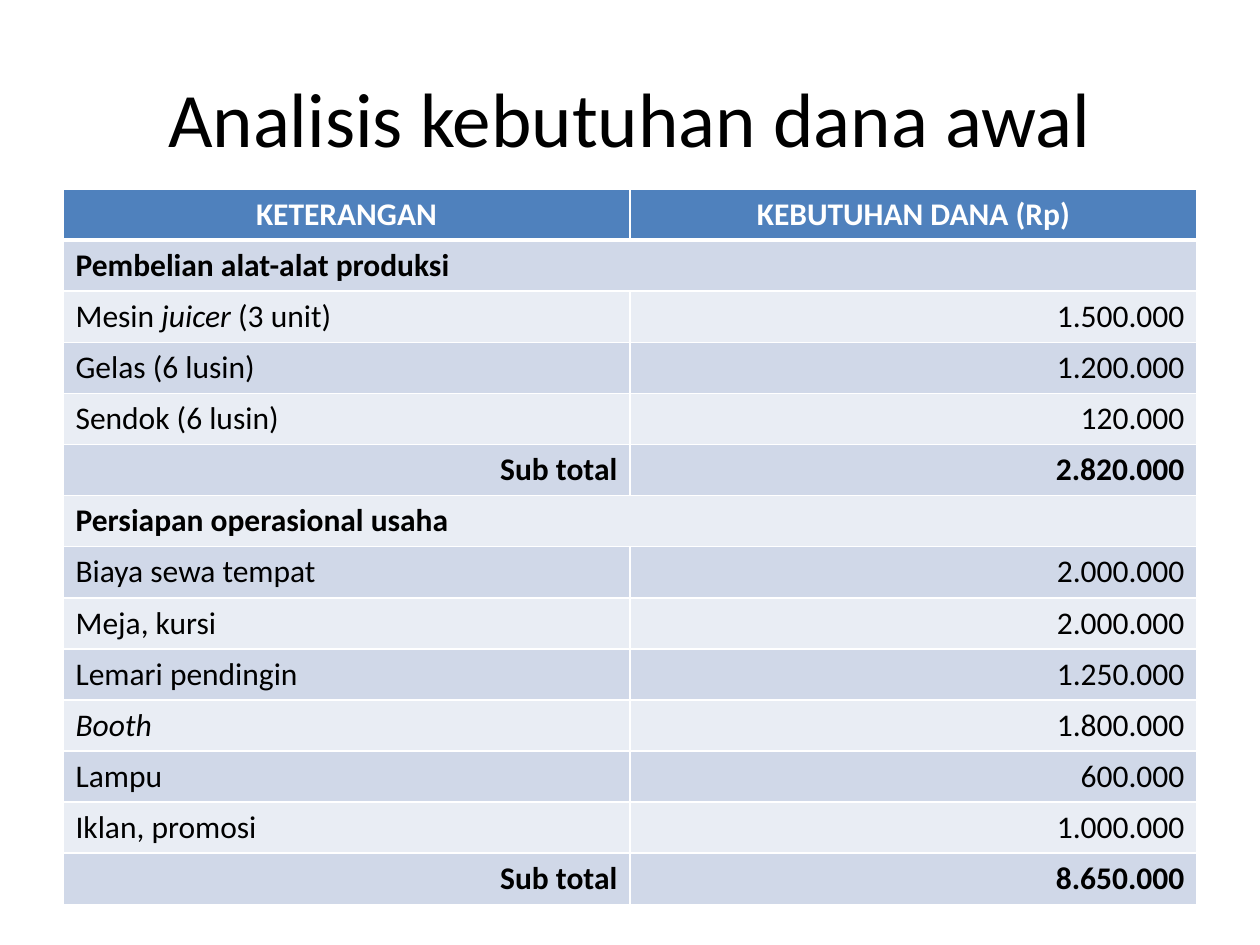
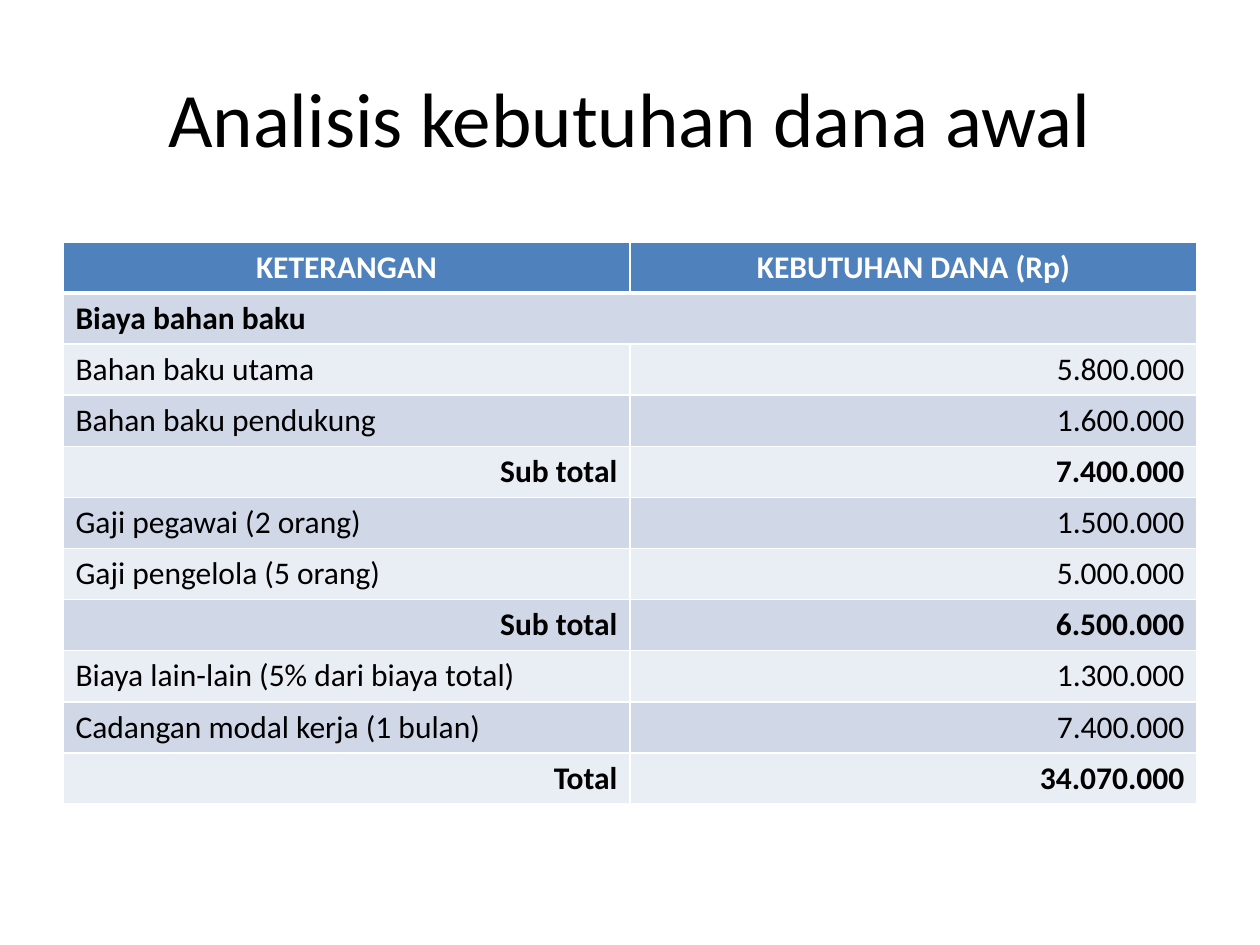
"""Build two slides that list the start-up funds a juice business needs."""
from lxml import etree
from pptx import Presentation
from pptx.dml.color import RGBColor
from pptx.enum.text import MSO_ANCHOR, PP_ALIGN
from pptx.oxml.ns import qn
from pptx.util import Inches, Pt

LEFT, CENTER, RIGHT = PP_ALIGN.LEFT, PP_ALIGN.CENTER, PP_ALIGN.RIGHT
MIDDLE = MSO_ANCHOR.MIDDLE
BLACK = RGBColor(0x00, 0x00, 0x00)
WHITE = RGBColor(0xFF, 0xFF, 0xFF)
BLUE = RGBColor(0x4F, 0x81, 0xBD)
DARK_BAND = RGBColor(0xD0, 0xD8, 0xE8)
LIGHT_BAND = RGBColor(0xE9, 0xED, 0xF4)
FONT = "Calibri"
TITLE_ONLY = 5
MARGIN, CONTENT_WIDTH = Inches(0.5), Inches(9)
ROW_HEIGHT = Inches(5.68 / 14)

TITLE = "Analisis kebutuhan dana awal"
HEADER = ("KETERANGAN", "KEBUTUHAN DANA (Rp)")
EQUIPMENT_COSTS = [
    ("Pembelian alat-alat produksi", None),
    ("Mesin *juicer* (3 unit)", "1.500.000"),
    ("Gelas (6 lusin)", "1.200.000"),
    ("Sendok (6 lusin)", "120.000"),
    ("Sub total", "2.820.000"),
    ("Persiapan operasional usaha", None),
    ("Biaya sewa tempat", "2.000.000"),
    ("Meja, kursi", "2.000.000"),
    ("Lemari pendingin", "1.250.000"),
    ("*Booth*", "1.800.000"),
    ("Lampu", "600.000"),
    ("Iklan, promosi", "1.000.000"),
    ("Sub total", "8.650.000"),
]
RUNNING_COSTS = [
    ("Biaya bahan baku", None),
    ("Bahan baku utama", "5.800.000"),
    ("Bahan baku pendukung", "1.600.000"),
    ("Sub total", "7.400.000"),
    ("Gaji pegawai (2 orang)", "1.500.000"),
    ("Gaji pengelola (5 orang)", "5.000.000"),
    ("Sub total", "6.500.000"),
    ("Biaya lain-lain (5% dari biaya total)", "1.300.000"),
    ("Cadangan modal kerja (1 bulan)", "7.400.000"),
    ("Total", "34.070.000"),
]


class BudgetDeck:
    """Hold the deck, its style and the current page."""

    def __init__(self):
        self.deck = Presentation()
        self.deck.slide_width, self.deck.slide_height = Inches(10), Inches(7.5)
        self.page = None

    def add_page(self, title):
        """Start a page with a centred title."""
        self.page = self.deck.slides.add_slide(self.deck.slide_layouts[TITLE_ONLY])
        box = self.page.shapes.title
        place = {"left": MARGIN, "top": Inches(0.3), "width": CONTENT_WIDTH, "height": Inches(1.25)}
        for name, value in place.items():
            setattr(box, name, value)
        box.text_frame.vertical_anchor = MIDDLE
        self.add_text(box.text_frame, title, CENTER, size=Pt(44))

    def add_text(self, frame, text, alignment, color=BLACK, **format_values):
        """Fill one paragraph, with the words between asterisks in italics."""
        para = frame.paragraphs[0]
        para.alignment = alignment
        for index, part in enumerate(text.split("*")):
            if part:
                span = para.add_run()
                span.text = part
                values = {"name": FONT, "italic": index % 2 == 1, **format_values}
                for name, value in values.items():
                    setattr(span.font, name, value)
                span.font.color.rgb = color

    def add_border(self, cell, side, width):
        """Draw one white cell border."""
        line = etree.SubElement(cell._tc.get_or_add_tcPr(), qn(f"a:ln{side}"), w=str(Pt(width)))
        fill = etree.SubElement(line, qn("a:solidFill"))
        etree.SubElement(fill, qn("a:srgbClr"), val=str(WHITE))

    def style_cell(self, cell, row):
        """Give a cell its borders and the fill of its row."""
        widths = {"L": 1, "R": 1, "T": 3 if row == 1 else 1, "B": 3 if row == 0 else 1}
        for side, width in widths.items():
            self.add_border(cell, side, width)
        cell.fill.solid()
        band = DARK_BAND if row % 2 else LIGHT_BAND
        cell.fill.fore_color.rgb = band if row else BLUE

    def add_budget(self, top, costs):
        """Add a banded table of costs below its header row."""
        count = len(costs) + 1
        table = self.page.shapes.add_table(
            count, len(HEADER), MARGIN, top, CONTENT_WIDTH, ROW_HEIGHT * count).table
        for row, texts in enumerate([HEADER, *costs]):
            table.rows[row].height = ROW_HEIGHT
            label, amount = texts
            is_heading = amount is None
            is_total = label.lower().endswith("total")
            alignments = (RIGHT if is_total else LEFT, RIGHT) if row else (CENTER, CENTER)
            for column, text in enumerate(texts):
                cell = table.cell(row, column)
                self.style_cell(cell, row)
                if text:
                    self.add_text(cell.text_frame, text, alignments[column],
                                  BLACK if row else WHITE, size=Pt(18),
                                  bold=row == 0 or is_heading or is_total)
            if is_heading:
                table.cell(row, 0).merge(table.cell(row, 1))


def main():
    """Build and save the deck."""
    budget = BudgetDeck()
    for top, costs in ((Inches(1.5), EQUIPMENT_COSTS), (Inches(1.92), RUNNING_COSTS)):
        budget.add_page(TITLE)
        budget.add_budget(top, costs)
    budget.deck.save("out.pptx")


if __name__ == "__main__":
    main()
